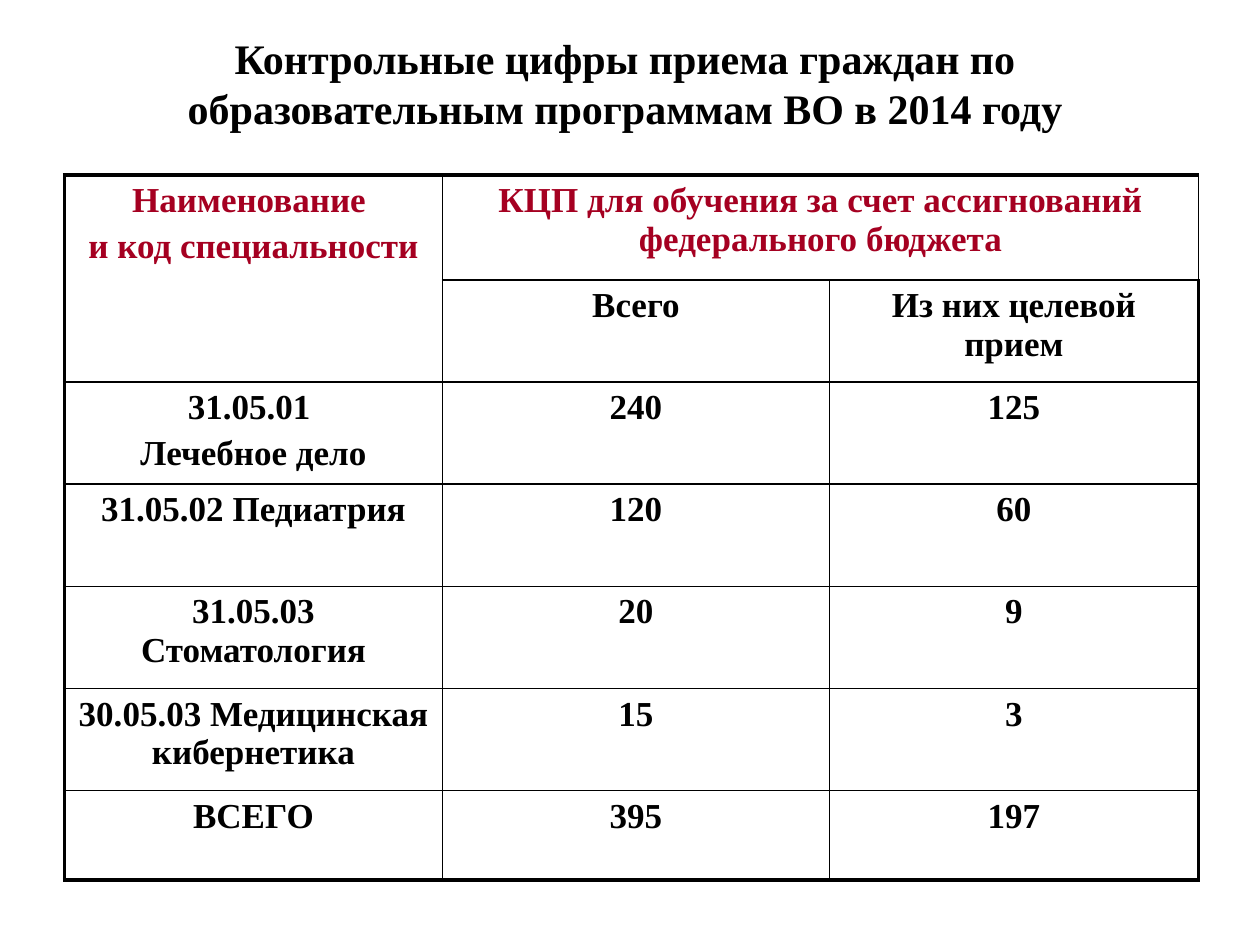
import pptx
import pptx.util
import pptx.dml.color
import pptx.enum.text
import pptx.oxml
import pptx.oxml.ns
import lxml.etree

Cm = pptx.util.Cm
Pt = pptx.util.Pt
BLACK = pptx.dml.color.RGBColor(0x00, 0x00, 0x00)
RED = pptx.dml.color.RGBColor(0xA5, 0x00, 0x21)

TITLE = "Контрольные цифры приема граждан по образовательным программам ВО в 2014 году"
ROWS = [
    ["Наименование \nи код специальности",
     "КЦП для обучения за счет ассигнований федерального бюджета", ""],
    ["", "Всего", "Из них целевой прием"],
    ["31.05.01 \nЛечебное дело", "240", "125"],
    ["31.05.02 Педиатрия", "120", "60"],
    ["31.05.03 Стоматология", "20", "9"],
    ["30.05.03 Медицинская кибернетика", "15", "3"],
    ["ВСЕГО", "395", "197"],
]
WIDTHS = [7.62, 7.8, 7.44]
HEIGHTS = [2.11] + [2.06] * 5 + [1.8]
SPANS = [((0, 0), (1, 0)), ((0, 1), (0, 2))]


class Deck:
    font = "Times New Roman"
    thin = Pt(1)
    thick = Pt(2.25)

    def __init__(self, wide, high):
        self.show = pptx.Presentation()
        self.show.slide_width = wide
        self.show.slide_height = high
        self.slide = self.show.slides.add_slide(self.show.slide_layouts[6])

    def label(self, frame, text, size, color):
        frame.text = text
        for num, para in enumerate(frame.paragraphs):
            para.alignment = pptx.enum.text.PP_ALIGN.CENTER
            para.space_before = Pt(size * 0.2 if num else 0)
            for run in para.runs:
                run.font.name = self.font
                run.font.size = Pt(size)
                run.font.bold = True
                run.font.color.rgb = color

    def title(self, text, left, top, wide, high):
        frame = self.slide.shapes.add_textbox(left, top, wide, high).text_frame
        frame.word_wrap = True
        self.label(frame, text, 24, BLACK)

    def edge(self, cell, side, width):
        props = cell._tc.get_or_add_tcPr()
        tag = pptx.oxml.ns.qn
        line = lxml.etree.SubElement(props, tag("a:ln" + side), w=str(width))
        fill = lxml.etree.SubElement(line, tag("a:solidFill"))
        lxml.etree.SubElement(fill, tag("a:srgbClr"), val=str(BLACK))

    def table(self, rows, left, top, widths, heights, spans):
        last = len(rows) - 1
        end = len(widths) - 1
        grid = self.slide.shapes.add_table(
            len(rows), len(widths), left, top,
            Cm(sum(widths)), Cm(sum(heights))).table
        grid.first_row = False
        grid.horz_banding = False
        for col, wide in zip(grid.columns, widths):
            col.width = Cm(wide)
        for row, high in zip(grid.rows, heights):
            row.height = Cm(high)
        for r, texts in enumerate(rows):
            for c, text in enumerate(texts):
                cell = grid.cell(r, c)
                outer = {"L": c == 0, "R": c == end, "T": r == 0, "B": r == last}
                for side, bold in outer.items():
                    self.edge(cell, side, self.thick if bold else self.thin)
                cell.fill.background()
                if text:
                    self.label(cell.text_frame, text, 20, BLACK if r else RED)
        for start, stop in spans:
            grid.cell(*start).merge(grid.cell(*stop))


def main():
    deck = Deck(Cm(25.4), Cm(19.05))
    deck.table(ROWS, Cm(1.3), Cm(3.53), WIDTHS, HEIGHTS, SPANS)
    deck.title(TITLE, Cm(1.7), Cm(0.53), Cm(21.8), Cm(2.29))
    deck.show.save("out.pptx")


if __name__ == "__main__":
    main()
